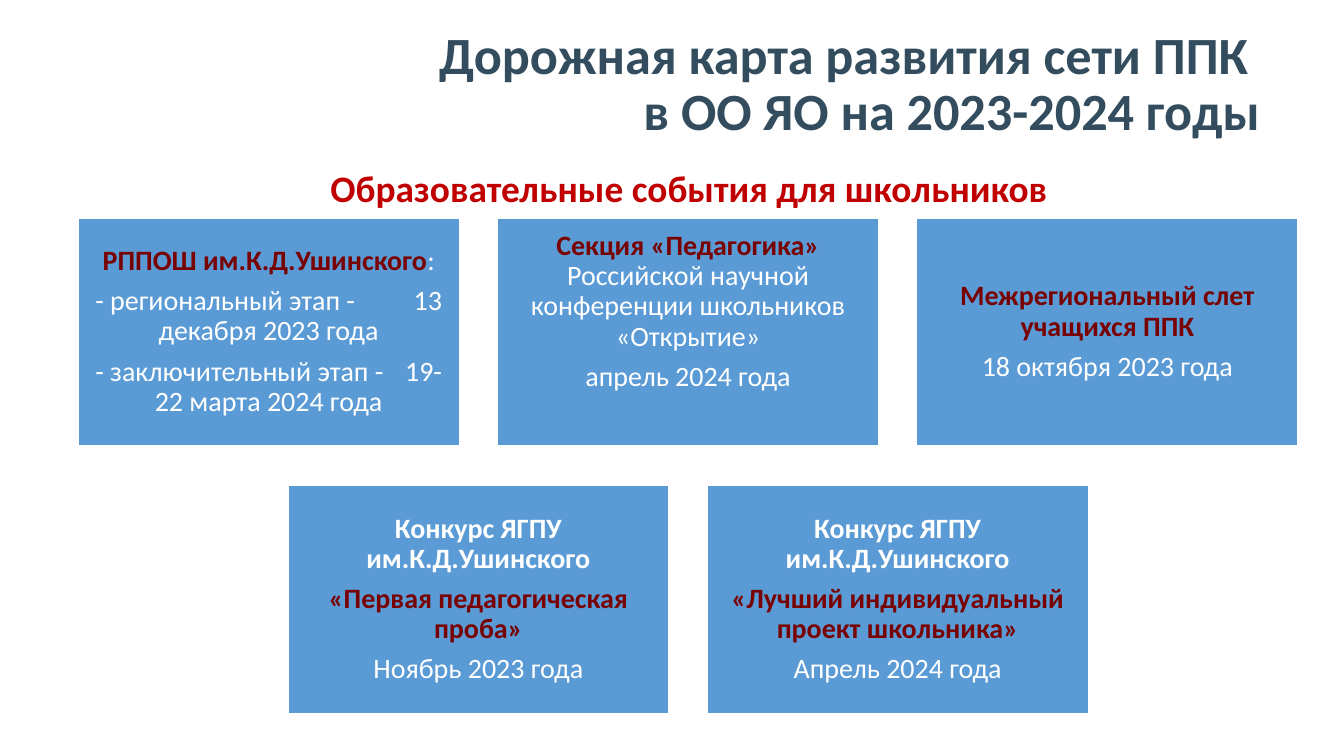
from lxml.etree import SubElement
from pptx import Presentation
from pptx.dml.color import RGBColor
from pptx.enum.shapes import MSO_SHAPE
from pptx.enum.text import MSO_ANCHOR, PP_ALIGN
from pptx.oxml.ns import qn
from pptx.util import Inches, Pt

COLORS = {"title": "334D5E", "heading": "C00000", "card": "5B9BD5",
          "accent": "780202", "white": "FFFFFF"}
SLIDE_W = 10
CARD_W, CARD_H, GAP, INSET = 2.84, 1.7, 0.28, 0.13
TABS = [("ctr", CARD_W / 2 - INSET), ("r", CARD_W - 2 * INSET)]
ACCENT, PLAIN, STRONG = ("accent", True), ("white", False), ("white", True)
CONTEST = [("Конкурс ЯГПУ им.К.Д.Ушинского", STRONG)]

ROWS = [
    (0.58, 1.62, [
        [[("РППОШ им.К.Д.Ушинского", ACCENT), (":", PLAIN)],
         [("- региональный этап -\t13\v\tдекабря 2023 года", PLAIN)],
         [("- заключительный этап -\t19-\v\t22 марта 2024 года", PLAIN)]],
        [[("Секция «Педагогика» ", ACCENT),
          ("Российской научной конференции школьников «Открытие»", PLAIN)],
         [("апрель 2024 года", PLAIN)]],
        [[("Межрегиональный слет учащихся ППК", ACCENT)],
         [("18 октября 2023 года", PLAIN)]],
    ]),
    (2.14, 3.61, [
        [CONTEST, [("«Первая педагогическая проба»", ACCENT)],
         [("Ноябрь 2023 года", PLAIN)]],
        [CONTEST, [("«Лучший индивидуальный проект школьника»", ACCENT)],
         [("Апрель 2024 года", PLAIN)]],
    ]),
]
RAISED_CARD = (0, 1)


def style_run(r, size, color, bold):
    """Set the font of one run."""
    r.font.name = "Calibri"
    r.font.size = Pt(size)
    r.font.bold = bold
    r.font.color.rgb = RGBColor.from_string(COLORS[color])


def add_tabs(p):
    """Give a paragraph a centre tab and a right tab."""
    tab_list = SubElement(p._p.get_or_add_pPr(), qn("a:tabLst"))
    for align, pos in TABS:
        SubElement(tab_list, qn("a:tab"), pos=str(Inches(pos)), algn=align)


def add_label(s, box, text, size, color, align):
    """Add a bold text box."""
    tf = s.shapes.add_textbox(*map(Inches, box)).text_frame
    tf.word_wrap = True
    p = tf.paragraphs[0]
    p.text = text
    p.alignment = align
    for r in p.runs:
        style_run(r, size, color, True)
    return tf


def fill_paragraph(p, parts):
    """Write the styled parts of one card paragraph."""
    tabbed = any("\t" in text for text, _ in parts)
    if tabbed:
        add_tabs(p)
    p.alignment = PP_ALIGN.LEFT if tabbed else PP_ALIGN.CENTER
    p.line_spacing = 0.9
    p.space_after = Pt(5.25)
    for text, (color, bold) in parts:
        for i, line in enumerate(text.split("\v")):
            if i:
                p.add_line_break()
            r = p.add_run()
            r.text = line
            style_run(r, 15, color, bold)


def add_card(s, left, top, paragraphs, bottom=0.06):
    """Add an event card with its text."""
    sp = s.shapes.add_shape(MSO_SHAPE.RECTANGLE, Inches(left), Inches(top),
                            Inches(CARD_W), Inches(CARD_H))
    sp.shadow.inherit = False
    sp.fill.solid()
    sp.fill.fore_color.rgb = RGBColor.from_string(COLORS["card"])
    sp.line.color.rgb = RGBColor.from_string(COLORS["white"])
    sp.line.width = Pt(1)
    tf = sp.text_frame
    tf.word_wrap = True
    tf.vertical_anchor = MSO_ANCHOR.MIDDLE
    tf.margin_left = tf.margin_right = Inches(INSET)
    tf.margin_top, tf.margin_bottom = Inches(0.06), Inches(bottom)
    for i, parts in enumerate(paragraphs):
        fill_paragraph(tf.add_paragraph() if i else tf.paragraphs[0], parts)


def main():
    """Build the slide and save it."""
    prs = Presentation()
    prs.slide_width, prs.slide_height = Inches(SLIDE_W), Inches(SLIDE_W * 9 / 16)
    s = prs.slides.add_slide(prs.slide_layouts[6])
    title = add_label(s, (2, 0.09, 7.47, 1.09),
                      "Дорожная карта развития сети ППК \vв ОО ЯО на 2023-2024 годы",
                      28, "title", PP_ALIGN.RIGHT)
    title.vertical_anchor = MSO_ANCHOR.MIDDLE
    title.paragraphs[0].line_spacing = 0.9
    add_label(s, (2.36, 1.18, 7.12, 0.44), "Образовательные события для школьников",
              20, "heading", PP_ALIGN.LEFT)
    for row, (left, top, cards) in enumerate(ROWS):
        for col, paragraphs in enumerate(cards):
            bottom = 0.36 if (row, col) == RAISED_CARD else 0.06
            add_card(s, left + col * (CARD_W + GAP), top, paragraphs, bottom)
    prs.save("out.pptx")


if __name__ == "__main__":
    main()
